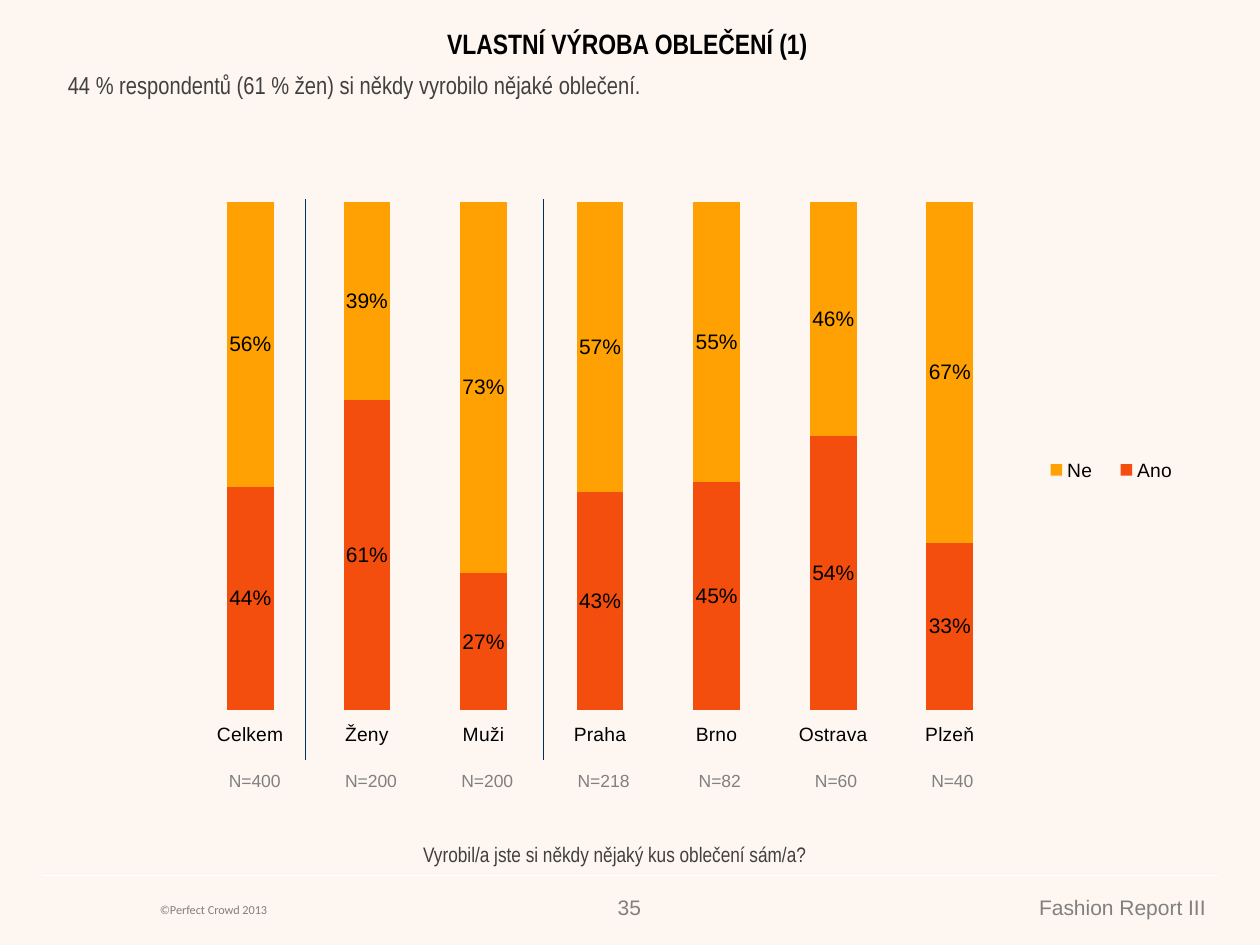
import dataclasses
import pptx
import pptx.chart.data
import pptx.dml.color
import pptx.enum.chart
import pptx.enum.shapes
import pptx.enum.text
import pptx.oxml
import pptx.oxml.ns
import pptx.util

COLUMNS, ROWS = 100, 75
ALIGN = pptx.enum.text.PP_ALIGN
ANCHOR = pptx.enum.text.MSO_ANCHOR
NO_TABLE_STYLE = "{2D5ABB26-0587-4C30-8999-92F81FD0307C}"


@dataclasses.dataclass(frozen=True)
class Theme:
    background: str = "FEF6F0"
    black: str = "000000"
    dark: str = "404040"
    grey: str = "808080"
    white: str = "FFFFFF"
    navy: str = "002F5E"
    yes: str = "F34E0D"
    no: str = "FFA102"
    sans: str = "Arial"
    narrow: str = "Arial Narrow"
    small_print: str = "Calibri"
    title: float = 16
    lead: float = 14
    body: float = 12
    axis: float = 11
    base: float = 10
    copyright: float = 7
    rule: float = 0.75


THEME = Theme()


@dataclasses.dataclass(frozen=True)
class Box:
    x: float
    y: float
    w: float
    h: float

    def inner(self, x, y, w, h):
        return Box(self.x + x * self.w, self.y + y * self.h, w * self.w, h * self.h)

    def emu(self, prs):
        cw, rh = prs.slide_width / COLUMNS, prs.slide_height / ROWS
        return [round(v) for v in (self.x * cw, self.y * rh, self.w * cw, self.h * rh)]


def rgb(color):
    return pptx.dml.color.RGBColor.from_string(color)


def style_font(font, size, color, name, bold=False):
    font.size = pptx.util.Pt(size)
    font.name = name
    font.bold = bold
    font.color.rgb = rgb(color)


def write(tf, text, size, color, name, align=ALIGN.LEFT, anchor=ANCHOR.TOP, bold=False):
    tf.word_wrap = True
    tf.vertical_anchor = anchor
    p = tf.paragraphs[0]
    p.alignment = align
    r = p.add_run()
    r.text = text
    style_font(r.font, size, color, name, bold)


def add_text(prs, s, box, text, size, color, name, **options):
    sp = s.shapes.add_textbox(*box.emu(prs))
    write(sp.text_frame, text, size, color, name, **options)


def add_line(prs, s, box, color):
    x, y, w, h = box.emu(prs)
    cx = s.shapes.add_connector(pptx.enum.shapes.MSO_CONNECTOR.STRAIGHT, x, y, x + w, y + h)
    cx.line.color.rgb = rgb(color)
    cx.line.width = pptx.util.Pt(THEME.rule)
    cx._element.spPr.append(
        pptx.oxml.parse_xml("<a:effectLst %s/>" % pptx.oxml.ns.nsdecls("a")))


def manual_layout(x, y, w, h, inner=False):
    target = '<c:layoutTarget val="inner"/>' if inner else ""
    return pptx.oxml.parse_xml(
        f'<c:layout {pptx.oxml.ns.nsdecls("c")}><c:manualLayout>{target}'
        '<c:xMode val="edge"/><c:yMode val="edge"/>'
        f'<c:x val="{x}"/><c:y val="{y}"/><c:w val="{w}"/><c:h val="{h}"/>'
        '</c:manualLayout></c:layout>')


def set_layout(parent, index, layout):
    for old in parent.findall(pptx.oxml.ns.qn("c:layout")):
        parent.remove(old)
    parent.insert(index, layout)


def add_heading(prs, s, box):
    title = s.shapes.title
    title.left, title.top, title.width, title.height = box.inner(0.01, 0, 0.95, 0.3).emu(prs)
    write(title.text_frame, "VLASTNÍ VÝROBA OBLEČENÍ (1)", THEME.title, THEME.black,
          THEME.narrow, align=ALIGN.CENTER, bold=True)
    add_text(prs, s, box.inner(0, 0.28, 1, 0.72),
             "44 % respondentů (61 % žen) si někdy vyrobilo nějaké oblečení.",
             THEME.lead, THEME.dark, THEME.narrow)


def add_answer_chart(prs, s, box):
    kinds = pptx.enum.chart
    data = pptx.chart.data.CategoryChartData(number_format="0")
    data.categories = ["Celkem", "Ženy", "Muži", "Praha", "Brno", "Ostrava", "Plzeň"]
    data.add_series("Ano", [44, 61, 27, 43, 45, 54, 33])
    data.add_series("Ne", [56, 39, 73, 57, 55, 46, 67])
    chart = s.shapes.add_chart(
        kinds.XL_CHART_TYPE.COLUMN_STACKED_100, *box.emu(prs), data).chart
    style_font(chart.font, THEME.body, THEME.black, THEME.sans)
    chart.has_title = False

    plot = chart.plots[0]
    plot.gap_width, plot.overlap, plot.vary_by_categories = 150, 100, False
    for series, color in zip(plot.series, (THEME.yes, THEME.no)):
        series.format.fill.solid()
        series.format.fill.fore_color.rgb = rgb(color)
        labels = series.data_labels
        labels.show_value = True
        labels.number_format = '#,##0"%"'
        labels.number_format_is_linked = False
        labels.position = kinds.XL_LABEL_POSITION.CENTER
        style_font(labels.font, THEME.body, THEME.black, THEME.sans)

    chart.value_axis.visible = False
    chart.value_axis.has_major_gridlines = False
    axis = chart.category_axis
    axis.tick_label_position = kinds.XL_TICK_LABEL_POSITION.LOW
    axis.format.line.fill.background()
    style_font(axis.tick_labels.font, THEME.axis, THEME.black, THEME.sans)

    chart.has_legend = True
    legend = chart.legend
    legend.position = kinds.XL_LEGEND_POSITION.RIGHT
    legend.include_in_layout = False
    style_font(legend.font, THEME.axis, THEME.black, THEME.sans)
    set_layout(legend._element, 1, manual_layout(0.83, 0.19, 0.16, 0.58))
    plot_area = chart._chartSpace.chart.plotArea
    set_layout(plot_area, 0, manual_layout(0.02, 0.055, 0.79, 0.807, inner=True))

    for x in (0.13, 0.36):
        add_line(prs, s, box.inner(x, 0.05, 0, 0.89), THEME.navy)


def add_base_sizes(prs, s, box):
    bases = [400, 200, 200, 218, 82, 60, 40]
    table = s.shapes.add_table(1, len(bases), *box.emu(prs)).table
    table.first_row = table.horz_banding = False
    table._tbl.tblPr.find(pptx.oxml.ns.qn("a:tableStyleId")).text = NO_TABLE_STYLE
    for cell, base in zip(table.rows[0].cells, bases):
        cell.fill.background()
        cell.margin_left = cell.margin_right = cell.margin_top = pptx.util.Inches(0.01)
        cell.margin_bottom = 0
        cell.vertical_anchor = ANCHOR.MIDDLE
        write(cell.text_frame, f"N={base}", THEME.base, THEME.grey, THEME.sans,
              align=ALIGN.CENTER, anchor=None)


def add_footer(prs, s, box):
    add_line(prs, s, box.inner(0, 0, 1, 0), THEME.white)
    add_text(prs, s, box.inner(0.09, 0.4, 0.31, 0.55), "©Perfect Crowd 2013",
             THEME.copyright, THEME.grey, THEME.small_print)
    for x, w, text in ((0.47, 0.05, "35"), (0.61, 0.39, "Fashion Report III")):
        add_text(prs, s, box.inner(x, 0.25, w, 0.75), text, THEME.body, THEME.grey,
                 THEME.sans, align=ALIGN.RIGHT)


def main():
    prs = pptx.Presentation()
    prs.slide_width, prs.slide_height = pptx.util.Inches(10), pptx.util.Inches(7.5)
    s = prs.slides.add_slide(prs.slide_layouts[5])
    s.background.fill.solid()
    s.background.fill.fore_color.rgb = rgb(THEME.background)
    add_footer(prs, s, Box(3.3, 69.5, 93.4, 4))
    add_heading(prs, s, Box(4.4, 1.6, 93.6, 12.3))
    add_text(prs, s, Box(3.5, 64.3, 90.6, 5),
             "Vyrobil/a jste si někdy nějaký kus oblečení sám/a?", THEME.body, THEME.dark,
             THEME.narrow, align=ALIGN.CENTER, anchor=ANCHOR.BOTTOM)
    add_base_sizes(prs, s, Box(15.6, 60.9, 64.6, 2.1))
    add_answer_chart(prs, s, Box(13.6, 13.3, 82, 50))
    prs.save("out.pptx")


if __name__ == "__main__":
    main()
